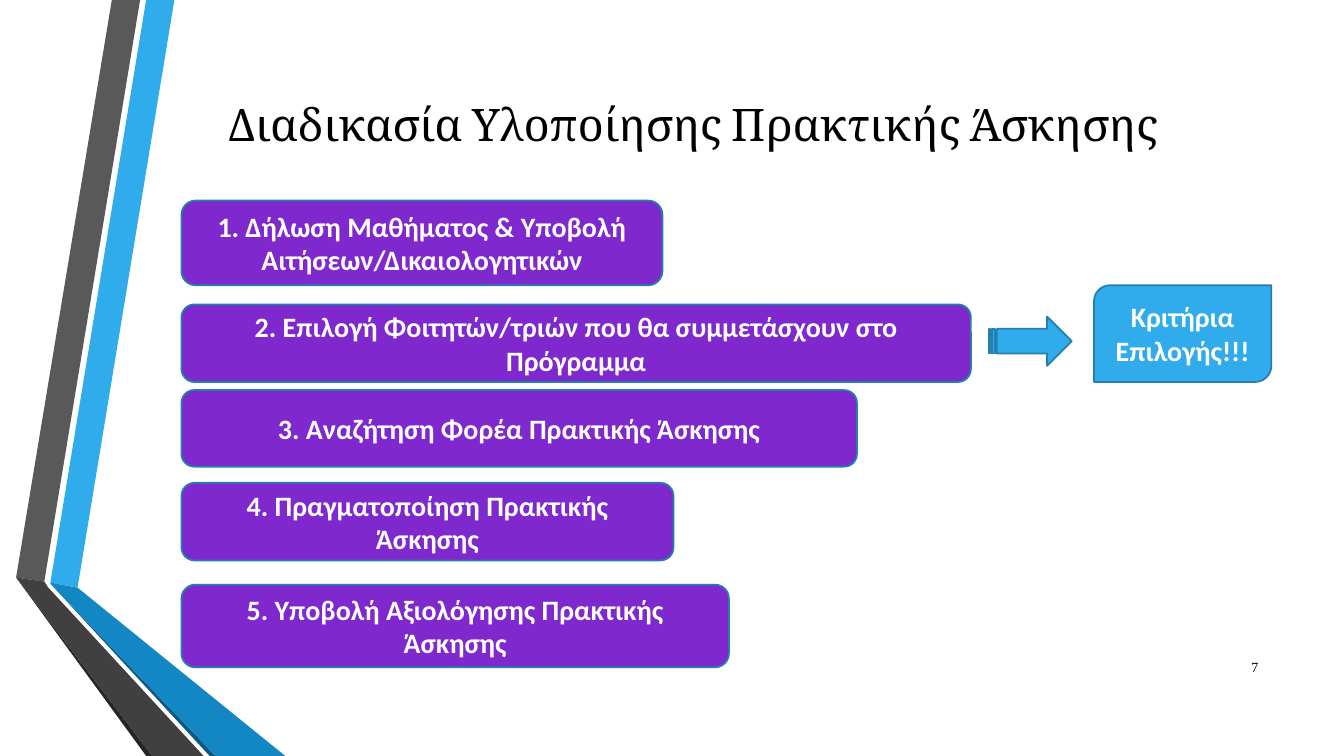
from dataclasses import dataclass

from pptx import Presentation
from pptx.dml.color import RGBColor
from pptx.enum.shapes import MSO_SHAPE
from pptx.enum.text import MSO_ANCHOR, MSO_AUTO_SIZE, PP_ALIGN
from pptx.util import Inches, Pt


@dataclass(frozen=True)
class Theme:
    black: str = "000000"
    white: str = "FFFFFF"
    purple: str = "7E28CD"
    blue: str = "30ACEC"
    outline: str = "247FAF"
    mid_blue: str = "1287C3"
    deep_blue: str = "0C5A82"
    grey: str = "595959"
    dark_grey: str = "404040"
    deep_grey: str = "262626"
    title_size: int = 32
    step_size: int = 20
    number_size: int = 10
    line_width: float = 1.25


theme = Theme()


def write(shape, text, font, size, color, align=PP_ALIGN.CENTER, bold=False):
    frame = shape.text_frame
    frame.text = text
    frame.word_wrap = True
    frame.auto_size = MSO_AUTO_SIZE.NONE
    frame.vertical_anchor = MSO_ANCHOR.MIDDLE
    para = frame.paragraphs[0]
    para.alignment = align
    span = para.runs[0]
    span.font.name = font
    span.font.size = Pt(size)
    span.font.bold = bold
    span.font.color.rgb = RGBColor.from_string(color)


def add_block(kind, left, top, width, height, color, text=""):
    block = page.shapes.add_shape(kind, *map(Inches, (left, top, width, height)))
    block.shadow.inherit = False
    block.fill.solid()
    block.fill.fore_color.rgb = RGBColor.from_string(color)
    block.line.color.rgb = RGBColor.from_string(theme.outline)
    block.line.width = Pt(theme.line_width)
    if text:
        write(block, text, "Calibri", theme.step_size, theme.white, bold=True)


deck = Presentation()
deck.slide_width, deck.slide_height = Inches(13.33), Inches(7.5)
page = deck.slides.add_slide(deck.slide_layouts[5])

ribbons = [
    (theme.blue, [(50, 578), (77, 583), (173, 0), (145, 0)]),
    (theme.grey, [(139, 0), (111, 0), (16, 573), (44, 577)]),
    (theme.deep_grey, [(16, 573), (145, 750), (151, 750)]),
    (theme.deep_blue, [(50, 579), (208, 750), (214, 750)]),
    (theme.mid_blue, [(50, 578), (50, 579), (214, 750), (283, 750), (77, 583)]),
    (theme.dark_grey, [(16, 573), (151, 750), (202, 750), (48, 583), (44, 577)]),
]
for color, corners in ribbons:
    outline = page.shapes.build_freeform(*corners[0], scale=Inches(0.01))
    outline.add_line_segments(corners[1:], close=True)
    ribbon = outline.convert_to_shape()
    ribbon.shadow.inherit = False
    ribbon.fill.solid()
    ribbon.fill.fore_color.rgb = RGBColor.from_string(color)
    ribbon.line.fill.background()

title = page.shapes.title
title.left, title.top, title.width, title.height = map(Inches, (2.02, 0.77, 9.71, 0.92))
write(title, "Διαδικασία Υλοποίησης Πρακτικής Άσκησης", "Cambria", theme.title_size, theme.black)

steps = [
    (1.99, 4.77, 0.84, "Δήλωση Μαθήματος & Υποβολή Αιτήσεων/Δικαιολογητικών"),
    (3.02, 7.83, 0.77, "Επιλογή Φοιτητών/τριών που θα συμμετάσχουν στο Πρόγραμμα"),
    (3.87, 6.7, 0.76, "Αναζήτηση Φορέα Πρακτικής Άσκησης"),
    (4.79, 4.88, 0.77, "Πραγματοποίηση Πρακτικής Άσκησης"),
    (5.8, 5.43, 0.82, "Υποβολή Αξιολόγησης Πρακτικής Άσκησης"),
]
for number, (top, width, height, text) in enumerate(steps, 1):
    add_block(MSO_SHAPE.ROUNDED_RECTANGLE, 1.8, top, width, height, theme.purple, f"{number}. {text}")

add_block(MSO_SHAPE.STRIPED_RIGHT_ARROW, 9.81, 3.14, 0.82, 0.49, theme.blue)
add_block(MSO_SHAPE.ROUND_2_DIAG_RECTANGLE, 10.85, 2.83, 1.76, 0.96, theme.blue, "Κριτήρια Επιλογής!!!")

page_number = page.shapes.add_textbox(*map(Inches, (11.98, 6.42, 0.6, 0.4)))
write(page_number, "7", "Times New Roman", theme.number_size, theme.black, PP_ALIGN.RIGHT)

deck.save("out.pptx")
